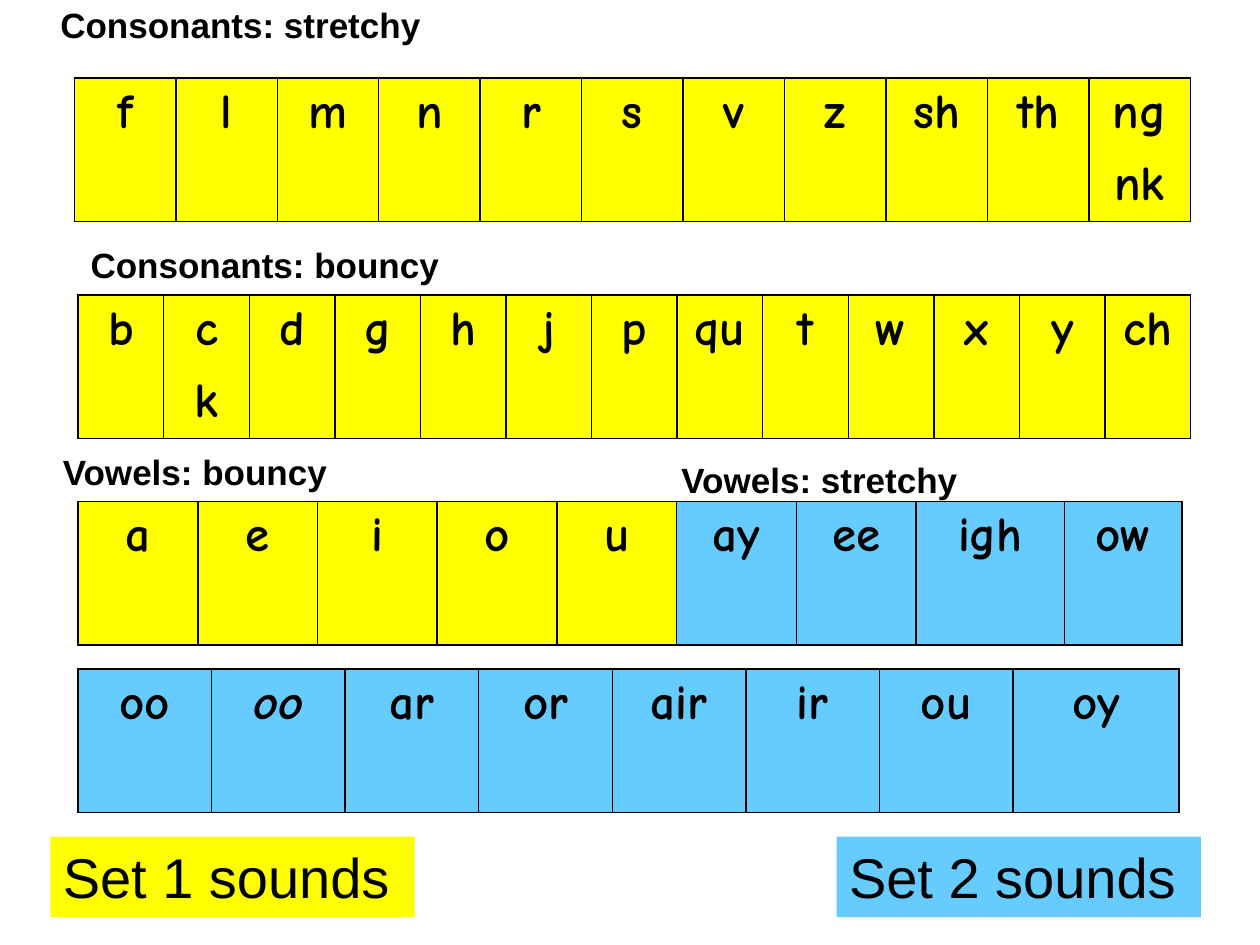
from lxml import etree
from pptx import Presentation
from pptx import util as u
from pptx.dml import color
from pptx.enum import shapes, text
from pptx.oxml import ns

YELLOW, BLUE, BLACK = "FFFF00", "66CCFF", "000000"


def rgb(code):
    """Turn a hex string into a colour."""
    return color.RGBColor.from_string(code)


def write(frame, words, size=20, font="Arial", bold=False, italic=False,
          align=text.PP_ALIGN.LEFT):
    """Put formatted words into a text frame."""
    para = frame.paragraphs[0]
    para.alignment = align
    run = para.add_run()
    run.text = words
    run.font.size = u.Pt(size)
    run.font.name = font
    run.font.bold = bold
    run.font.italic = italic
    run.font.color.rgb = rgb(BLACK)


def edge(cell, sides):
    """Draw the named sides of a cell and clear the others."""
    props = cell._tc.get_or_add_tcPr()
    for spot, side in enumerate("LRTB"):
        line = etree.Element(ns.qn(f"a:ln{side}"), w=str(u.Pt(1)))
        if side in sides:
            fill = etree.SubElement(line, ns.qn("a:solidFill"))
            etree.SubElement(fill, ns.qn("a:srgbClr"), val=BLACK)
        else:
            etree.SubElement(line, ns.qn("a:noFill"))
        props.insert(spot, line)


class Chart:
    """Sound chart style and its current slide."""

    font = "Comic Neue"
    size = 28
    row = 0.57

    def __init__(self, slide):
        """Keep the slide to draw on."""
        self.shapes = slide.shapes

    def label(self, words, left, top, width):
        """Add a bold heading."""
        box = self.shapes.add_textbox(
            u.Inches(left), u.Inches(top), u.Inches(width), u.Inches(0.44))
        box.text_frame.word_wrap = True
        write(box.text_frame, words, bold=True)

    def key(self, words, left, fill):
        """Add a coloured key box."""
        box = self.shapes.add_shape(
            shapes.MSO_SHAPE.RECTANGLE, u.Inches(left), u.Inches(6.64),
            u.Inches(2.89), u.Inches(0.64))
        box.shadow.inherit = False
        box.fill.solid()
        box.fill.fore_color.rgb = rgb(fill)
        box.line.fill.background()
        box.text_frame.vertical_anchor = text.MSO_ANCHOR.TOP
        write(box.text_frame, words, size=32)

    def grid(self, sounds, left, top, widths, first=0, below=None, slant=()):
        """Add a two-row sound table whose first columns are yellow."""
        below = below or {}
        table = self.shapes.add_table(
            2, len(sounds), u.Inches(left), u.Inches(top),
            u.Inches(sum(widths)), u.Inches(2 * self.row)).table
        table.first_row = table.horz_banding = False
        for line in table.rows:
            line.height = u.Inches(self.row)
        for col, sound in enumerate(sounds):
            table.columns[col].width = u.Inches(widths[col])
            pair = (sound, "LRT"), (below.get(col), "LRB")
            for row, (words, sides) in enumerate(pair):
                cell = table.cell(row, col)
                cell.fill.solid()
                cell.fill.fore_color.rgb = rgb(YELLOW if col < first else BLUE)
                edge(cell, sides)
                if words:
                    write(cell.text_frame, words, size=self.size,
                          font=self.font, bold=True, italic=col in slant,
                          align=text.PP_ALIGN.CENTER)


def main():
    """Build and save the sound chart."""
    deck = Presentation()
    deck.slide_width, deck.slide_height = u.Inches(10), u.Inches(7.5)
    chart = Chart(deck.slides.add_slide(deck.slide_layouts[6]))

    chart.grid("f l m n r s v z sh th ng".split(), 0.59, 0.62,
               [8.86 / 11] * 11, first=11, below={10: "nk"})
    chart.grid("b c d g h j p qu t w x y ch".split(), 0.62, 2.34,
               [8.83 / 13] * 13, first=13, below={1: "k"})
    chart.grid("a e i o u ay ee igh ow".split(), 0.62, 3.98,
               [0.95] * 7 + [1.18, 0.93], first=5)
    chart.grid("oo oo ar or air ir ou oy".split(), 0.62, 5.31,
               [1.06] * 7 + [1.32], slant=[1])

    chart.key("Set 1 sounds", 0.4, YELLOW)
    chart.key("Set 2 sounds", 6.64, BLUE)

    chart.label("Consonants: stretchy", 0.38, -0.02, 3.28)
    chart.label("Vowels: stretchy", 5.31, 3.59, 3.91)
    chart.label("Consonants: bouncy", 0.62, 1.88, 3.28)
    chart.label("Vowels: bouncy", 0.4, 3.53, 3.91)
    deck.save("out.pptx")


if __name__ == "__main__":
    main()
